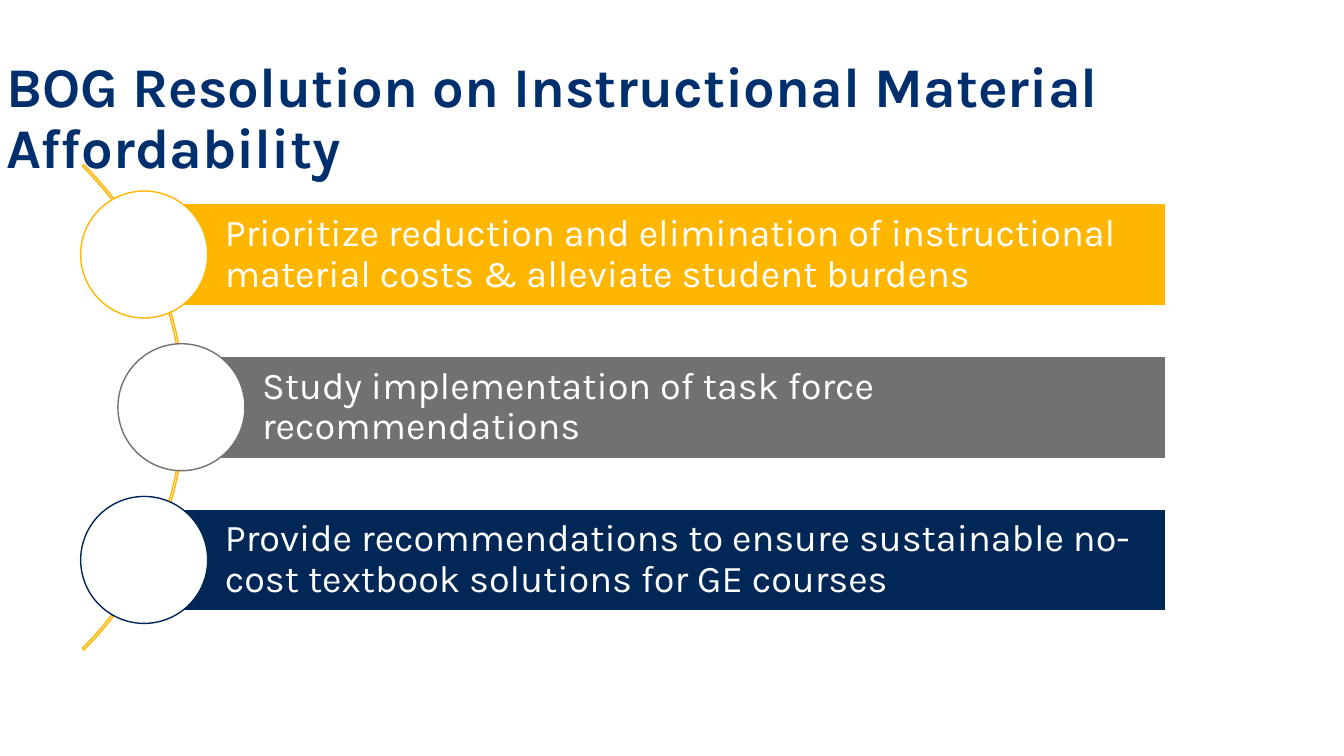
from dataclasses import dataclass

from pptx import Presentation
from pptx.dml.color import RGBColor
from pptx.enum.shapes import MSO_SHAPE
from pptx.enum.text import MSO_ANCHOR, MSO_AUTO_SIZE, PP_ALIGN
from pptx.shapes.autoshape import Shape
from pptx.slide import Slide
from pptx.text.text import TextFrame
from pptx.util import Inches, Length, Pt

WHITE = RGBColor(0xFF, 0xFF, 0xFF)
GOLD = RGBColor(0xFF, 0xB6, 0x00)
GRAY = RGBColor(0x71, 0x71, 0x71)
NAVY = RGBColor(0x00, 0x27, 0x55)
TITLE_BLUE = RGBColor(0x00, 0x2F, 0x6D)

RECT, OVAL, ARC = MSO_SHAPE.RECTANGLE, MSO_SHAPE.OVAL, MSO_SHAPE.BLOCK_ARC
TOP, MIDDLE = MSO_ANCHOR.TOP, MSO_ANCHOR.MIDDLE
LEFT, NO_AUTOFIT = PP_ALIGN.LEFT, MSO_AUTO_SIZE.NONE

FONT = "Karla"
SLIDE_W, SLIDE_H = Inches(13.33), Inches(7.5)


def wide(percent: float) -> Length:
    return Length(round(SLIDE_W * percent / 100))


def high(percent: float) -> Length:
    return Length(round(SLIDE_H * percent / 100))


MIDDLE_Y = high(53.87)
ROW_PITCH = high(20.2)
BAR_H = high(13.5)
BAR_RIGHT = wide(86.72)
CIRCLE = high(16.8)
ARC_SIZE = high(90.8)
ARC_CENTER_X = wide(-11.82)
BAR_INSETS = (wide(6), high(0.95), wide(0.55), high(0.95))
TITLE_INSETS = (wide(3.75), high(6.67), wide(3.75), high(0.67))


@dataclass(frozen=True)
class Action:
    text: str
    color: RGBColor
    left: Length


ACTIONS = [
    Action("Prioritize reduction and elimination of instructional material costs "
           "& alleviate student burdens", GOLD, wide(10.73)),
    Action("Study implementation of task force recommendations", GRAY, wide(13.5)),
    Action("Provide recommendations to ensure sustainable no-cost textbook "
           "solutions for GE courses", NAVY, wide(10.73)),
]


def write(tf: TextFrame, text: str, *, size: float, color: RGBColor,
          insets: tuple[Length, Length, Length, Length],
          anchor: MSO_ANCHOR, bold: bool = False) -> None:
    tf.word_wrap = True
    tf.auto_size = NO_AUTOFIT
    tf.vertical_anchor = anchor
    tf.margin_left, tf.margin_top, tf.margin_right, tf.margin_bottom = insets
    p = tf.paragraphs[0]
    p.alignment = LEFT
    p.line_spacing = 0.9
    p.space_before = Pt(0)
    r = p.add_run()
    r.text = text
    r.font.name = FONT
    r.font.size = Pt(size)
    r.font.bold = bold
    r.font.color.rgb = color


def add_figure(s: Slide, kind: MSO_SHAPE, left: int, center_y: int, width: int,
               height: int, *, fill: RGBColor | None, line: RGBColor) -> Shape:
    sp = s.shapes.add_shape(kind, left, center_y - height // 2, width, height)
    sp.shadow.inherit = False
    if fill is None:
        sp.fill.background()
    else:
        sp.fill.solid()
        sp.fill.fore_color.rgb = fill
    sp.line.color.rgb = line
    sp.line.width = Pt(1)
    return sp


def add_title(s: Slide, text: str) -> None:
    sp = s.shapes.title
    sp.left, sp.top, sp.width, sp.height = wide(-3.3), high(1.2), wide(106.68), high(26.67)
    write(sp.text_frame, text, size=40, color=TITLE_BLUE, insets=TITLE_INSETS,
          anchor=TOP, bold=True)


def add_arc(s: Slide) -> None:
    sp = add_figure(s, ARC, ARC_CENTER_X - ARC_SIZE // 2, MIDDLE_Y, ARC_SIZE, ARC_SIZE,
                    fill=None, line=GOLD)
    for i, value in enumerate((189, 27, 0.32 / 100)):
        sp.adjustments[i] = value


def add_action(s: Slide, action: Action, center_y: int) -> None:
    bar = add_figure(s, RECT, action.left, center_y, BAR_RIGHT - action.left, BAR_H,
                     fill=action.color, line=WHITE)
    write(bar.text_frame, action.text, size=27, color=WHITE, insets=BAR_INSETS,
          anchor=MIDDLE)
    add_figure(s, OVAL, action.left - CIRCLE // 2, center_y, CIRCLE, CIRCLE,
               fill=WHITE, line=action.color)


def main() -> None:
    prs = Presentation()
    prs.slide_width, prs.slide_height = SLIDE_W, SLIDE_H
    s = prs.slides.add_slide(prs.slide_layouts[5])
    add_title(s, "BOG Resolution on Instructional Material Affordability")
    add_arc(s)
    for i, action in enumerate(ACTIONS):
        add_action(s, action, MIDDLE_Y + (i - 1) * ROW_PITCH)
    prs.save("out.pptx")


if __name__ == "__main__":
    main()
